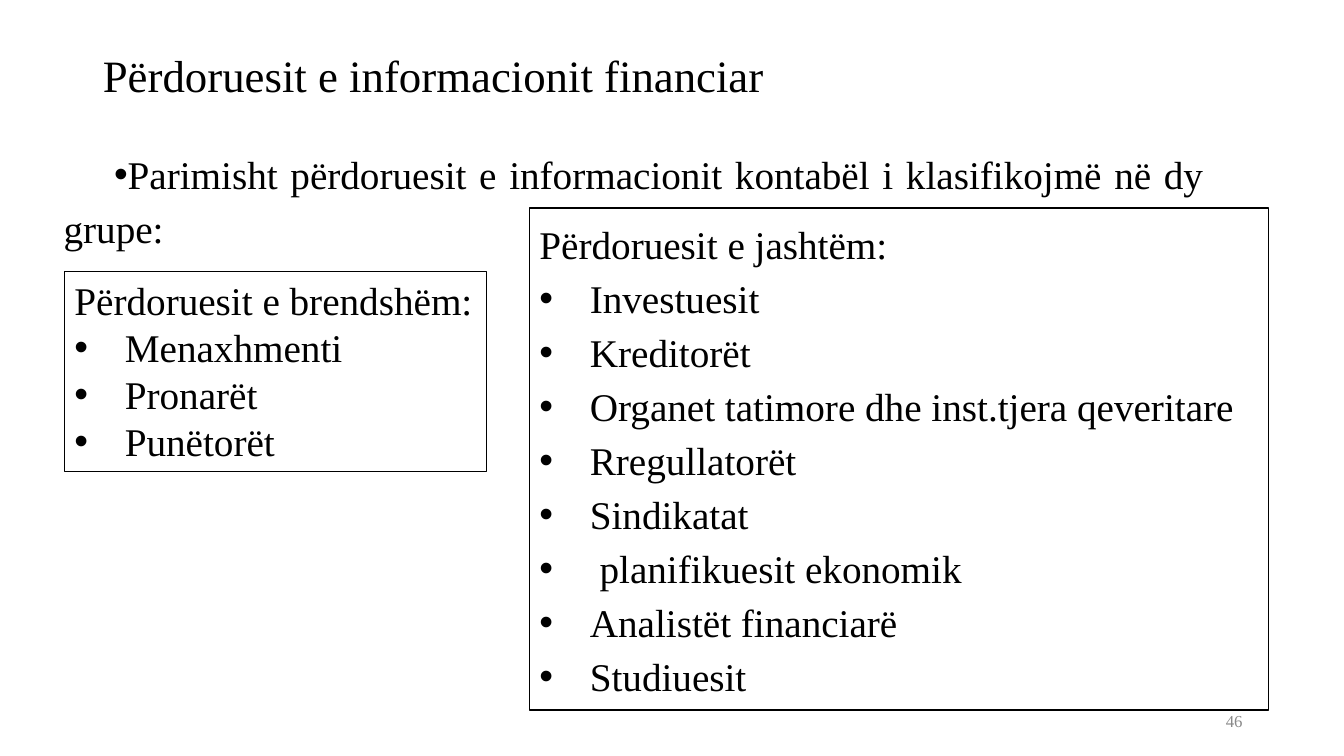
from dataclasses import dataclass

from lxml import etree
from pptx import Presentation
from pptx.dml.color import RGBColor
from pptx.enum.shapes import MSO_SHAPE
from pptx.enum.text import MSO_ANCHOR, MSO_AUTO_SIZE, PP_ALIGN
from pptx.oxml.ns import qn
from pptx.util import Inches, Pt

RECTANGLE = MSO_SHAPE.RECTANGLE
MIDDLE, TOP = MSO_ANCHOR.MIDDLE, MSO_ANCHOR.TOP
LEFT, RIGHT, JUSTIFY = PP_ALIGN.LEFT, PP_ALIGN.RIGHT, PP_ALIGN.JUSTIFY
GROW = MSO_AUTO_SIZE.SHAPE_TO_FIT_TEXT
FIXED = MSO_AUTO_SIZE.NONE


@dataclass(frozen=True)
class Theme:
    font: str = "Times New Roman"
    ink: str = "000000"
    paper: str = "FFFFFF"
    muted: str = "898989"
    title: int = 32
    body: int = 28
    small: int = 12
    outline: int = 1
    indent: float = 0.5
    loose: float = 1.15


def set_bullet(para, margin, indent):
    """Give the paragraph a round bullet; margin and indent are in inches."""
    properties = para._p.get_or_add_pPr()
    properties.set("marL", str(Inches(margin)))
    properties.set("indent", str(Inches(indent)))
    etree.SubElement(properties, qn("a:buFont"), typeface="Arial")
    etree.SubElement(properties, qn("a:buChar"), char="•")


def write(para, text, *, font, size, color, align=LEFT, spacing=1.0, bullet=None):
    """Fill a paragraph; bullet is a (margin, indent) pair or None."""
    para.alignment = align
    para.line_spacing = spacing
    para.space_before = Pt(0)
    if bullet:
        set_bullet(para, *bullet)
    span = para.add_run()
    span.text = text
    span.font.name = font
    span.font.size = Pt(size)
    span.font.color.rgb = RGBColor.from_string(color)


class Page:
    """One slide; areas are (left, top, width, height) in percent of its size."""

    def __init__(self, deck, theme):
        self.deck = deck
        self.theme = theme
        self.slide = deck.slides.add_slide(deck.slide_layouts[5])

    def place(self, area):
        sides = (self.deck.slide_width, self.deck.slide_height) * 2
        return [round(side * share / 100) for side, share in zip(sides, area)]

    def title(self, text, area):
        box = self.slide.shapes.title
        box.left, box.top, box.width, box.height = self.place(area)
        box.text_frame.vertical_anchor = MIDDLE
        write(box.text_frame.paragraphs[0], text, font=self.theme.font,
              size=self.theme.title, color=self.theme.ink, spacing=0.9)

    def text(self, text, area, anchor=TOP, **style):
        frame = self.slide.shapes.add_textbox(*self.place(area)).text_frame
        frame.word_wrap = True
        frame.auto_size = FIXED
        frame.vertical_anchor = anchor
        write(frame.paragraphs[0], text, font=self.theme.font, **style)

    def group(self, heading, members, area, wrap=True, **style):
        """Draw an outlined box with a heading and a bulleted list."""
        theme = self.theme
        box = self.slide.shapes.add_shape(RECTANGLE, *self.place(area))
        box.shadow.inherit = False
        box.fill.solid()
        box.fill.fore_color.rgb = RGBColor.from_string(theme.paper)
        box.line.color.rgb = RGBColor.from_string(theme.ink)
        box.line.width = Pt(theme.outline)
        frame = box.text_frame
        frame.word_wrap = wrap
        frame.auto_size = GROW
        frame.vertical_anchor = TOP
        style.update(font=theme.font, size=theme.body, color=theme.ink)
        write(frame.paragraphs[0], heading, **style)
        for member in members:
            write(frame.add_paragraph(), member,
                  bullet=(theme.indent, -theme.indent), **style)


def main():
    deck = Presentation()
    deck.slide_width, deck.slide_height = Inches(13.33), Inches(7.5)
    theme = Theme()
    page = Page(deck, theme)

    page.title("Përdoruesit e informacionit financiar", (6.9, 5.3, 86.3, 10))
    page.text("Parimisht përdoruesit e informacionit kontabël i klasifikojmë në dy grupe: ",
              (4, 18.3, 86.3, 17.6), size=theme.body, color=theme.ink,
              align=JUSTIFY, spacing=theme.loose, bullet=(0, theme.indent))
    page.text("46", (70.7, 92.7, 22.5, 5.3), anchor=MIDDLE,
              size=theme.small, color=theme.muted, align=RIGHT)
    page.group("Përdoruesit e brendshëm:", ["Menaxhmenti", "Pronarët", "Punëtorët"],
               (4.8, 35.9, 31.4, 26.5), wrap=False)
    page.group("Përdoruesit e jashtëm:",
               ["Investuesit", "Kreditorët", "Organet tatimore dhe inst.tjera qeveritare",
                "Rregullatorët", "Sindikatat", " planifikuesit ekonomik",
                "Analistët financiarë", "Studiuesit"],
               (39.4, 27.5, 55, 66.4), align=JUSTIFY, spacing=theme.loose)
    deck.save("out.pptx")


if __name__ == "__main__":
    main()
